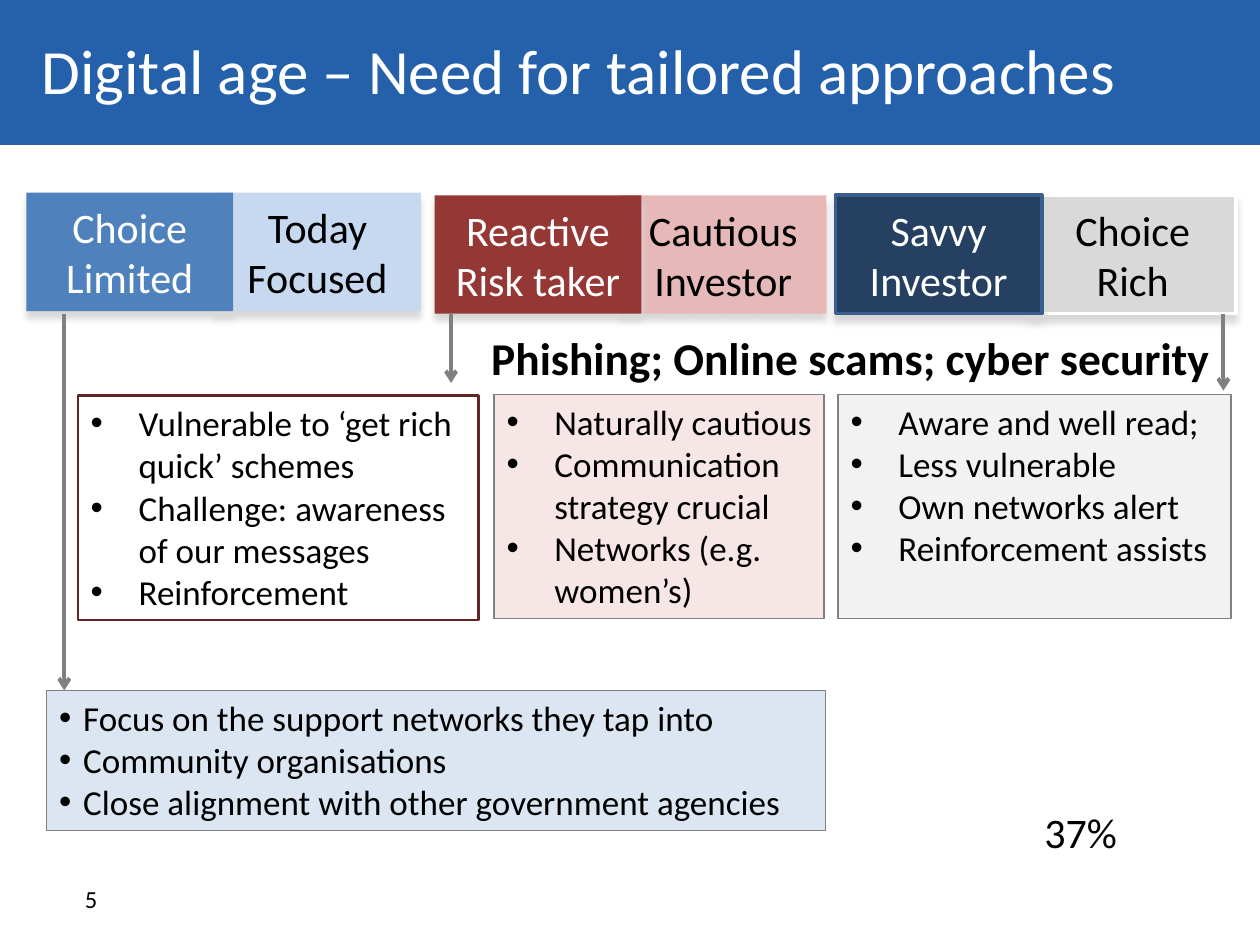
from lxml.etree import SubElement
from pptx import Presentation
from pptx.dml.color import RGBColor
from pptx.enum.shapes import MSO_CONNECTOR, MSO_SHAPE
from pptx.enum.text import MSO_ANCHOR, MSO_AUTO_SIZE, PP_ALIGN
from pptx.oxml.ns import qn
from pptx.util import Inches, Pt

FONT = "Calibri"
BLACK = RGBColor(0x00, 0x00, 0x00)
WHITE = RGBColor(0xFF, 0xFF, 0xFF)
GREY = RGBColor(0x80, 0x80, 0x80)
BANNER_BLUE = RGBColor(0x24, 0x61, 0xAA)
MID_BLUE = RGBColor(0x4F, 0x81, 0xBD)
PALE_BLUE = RGBColor(0xC6, 0xD9, 0xF1)
RED = RGBColor(0x95, 0x37, 0x35)
PINK = RGBColor(0xE6, 0xB9, 0xB8)
NAVY = RGBColor(0x25, 0x40, 0x61)
NAVY_EDGE = RGBColor(0x3A, 0x5F, 0x8C)
SILVER = RGBColor(0xD9, 0xD9, 0xD9)
LIST_GREY = RGBColor(0xF2, 0xF2, 0xF2)
LIST_BLUE = RGBColor(0xDC, 0xE6, 0xF2)
LIST_PINK = RGBColor(0xF6, 0xE7, 0xE6)
DARK_RED = RGBColor(0x63, 0x25, 0x23)

CARD_WIDTH = 1.64
LIST_TOP, LIST_HEIGHT = 3.13, 1.78
ARROW_TOP = 2.49

SEGMENT_PAIRS = [
    ((0.21, 1.53, 3.13, 0.94),
     ("Choice Limited", MID_BLUE, WHITE, None),
     ("Today Focused", PALE_BLUE, BLACK, None)),
    ((3.45, 1.55, 3.11, 0.94),
     ("Reactive Risk taker", RED, WHITE, None),
     ("Cautious Investor", PINK, BLACK, None)),
    ((6.63, 1.55, 3.18, 0.94),
     ("Savvy Investor", NAVY, WHITE, NAVY_EDGE),
     ("Choice Rich", SILVER, BLACK, WHITE)),
]

LISTS = [
    ((0.62, 3.14, 3.18, LIST_HEIGHT), None, DARK_RED, 1.5, 0.38,
     ["Vulnerable to ‘get rich quick’ schemes",
      "Challenge: awareness of our messages",
      "Reinforcement"]),
    ((3.92, LIST_TOP, 2.62, LIST_HEIGHT), LIST_PINK, GREY, 1, 0.38,
     ["Naturally cautious",
      "Communication strategy crucial",
      "Networks (e.g. women’s)"]),
    ((6.65, LIST_TOP, 3.12, LIST_HEIGHT), LIST_GREY, GREY, 1, 0.38,
     ["Aware and well read;",
      "Less vulnerable",
      "Own networks alert",
      "Reinforcement assists"]),
    ((0.37, 5.48, 6.18, 1.11), LIST_BLUE, GREY, 0.75, 0.19,
     ["Focus on the support networks they tap into",
      "Community organisations",
      "Close alignment with other government agencies"]),
]

ARROWS = [(0.51, 5.48), (3.58, 3.04), (9.71, 3.1)]


def place(part, box):
    part.left, part.top, part.width, part.height = map(Inches, box)


def add_run(paragraph, text, size, color, bold=False):
    run = paragraph.add_run()
    run.text = text
    run.font.name = FONT
    run.font.size = Pt(size)
    run.font.bold = bold
    run.font.color.rgb = color


def add_rectangle(slide, box, fill):
    rectangle = slide.shapes.add_shape(MSO_SHAPE.RECTANGLE, *map(Inches, box))
    rectangle.shadow.inherit = False
    rectangle.fill.solid()
    rectangle.fill.fore_color.rgb = fill
    rectangle.line.fill.background()
    return rectangle


def add_banner(slide, box, text):
    left, top, width, height = box
    band = add_rectangle(slide, box, BANNER_BLUE)
    title = slide.shapes.title
    title._element.addprevious(band._element)
    place(title, (left, top, width * 0.98, height * 0.95))
    frame = title.text_frame
    frame.auto_size = MSO_AUTO_SIZE.NONE
    frame.vertical_anchor = MSO_ANCHOR.MIDDLE
    frame.margin_left = Inches(0.33)
    frame.paragraphs[0].alignment = PP_ALIGN.LEFT
    add_run(frame.paragraphs[0], text, 36, WHITE)


def add_card(slide, box, text, fill, ink, edge):
    card = add_rectangle(slide, box, fill)
    if edge is not None:
        card.line.color.rgb = edge
        card.line.width = Pt(2)
    effects = card._element.spPr.find(qn("a:effectLst"))
    shadow = SubElement(effects, qn("a:outerShdw"), blurRad=str(Pt(4)),
                        dist=str(Pt(4)), dir="5400000", rotWithShape="0")
    SubElement(shadow, qn("a:srgbClr"), val=str(SILVER))
    frame = card.text_frame
    frame.word_wrap = True
    frame.vertical_anchor = MSO_ANCHOR.MIDDLE
    frame.paragraphs[0].alignment = PP_ALIGN.CENTER
    add_run(frame.paragraphs[0], text, 24, ink)


def add_segment_pair(slide, box, front, back):
    left, top, width, height = box
    add_card(slide, (left + width - CARD_WIDTH, top, CARD_WIDTH, height), *back)
    add_card(slide, (left, top, CARD_WIDTH, height), *front)


def fill_list(body, box, fill, edge, edge_width, indent, items):
    place(body, box)
    if fill is not None:
        body.fill.solid()
        body.fill.fore_color.rgb = fill
    body.line.color.rgb = edge
    body.line.width = Pt(edge_width)
    frame = body.text_frame
    frame.auto_size = MSO_AUTO_SIZE.NONE
    frame.word_wrap = True
    frame.vertical_anchor = MSO_ANCHOR.TOP
    frame.margin_right = Inches(0.05)
    for number, item in enumerate(items):
        paragraph = frame.add_paragraph() if number else frame.paragraphs[0]
        properties = paragraph._p.get_or_add_pPr()
        properties.set("marL", str(Inches(indent)))
        properties.set("indent", str(-Inches(indent)))
        SubElement(properties, qn("a:buFont"), typeface="Arial")
        SubElement(properties, qn("a:buChar"), char="•")
        paragraph.space_before = Pt(0)
        add_run(paragraph, item, 20, BLACK)


def add_label(slide, box, text, size, bold=False, align=PP_ALIGN.LEFT, wrap=True):
    label = slide.shapes.add_textbox(*map(Inches, box))
    frame = label.text_frame
    frame.word_wrap = wrap
    frame.paragraphs[0].alignment = align
    add_run(frame.paragraphs[0], text, size, BLACK, bold)


def add_down_arrow(slide, x, top, bottom):
    arrow = slide.shapes.add_connector(
        MSO_CONNECTOR.STRAIGHT, *map(Inches, (x, top, x, bottom)))
    arrow.line.color.rgb = GREY
    arrow.line.width = Pt(2.25)
    SubElement(arrow.line._get_or_add_ln(), qn("a:tailEnd"), type="arrow")
    SubElement(arrow._element.spPr, qn("a:effectLst"))


def main():
    deck = Presentation()
    deck.slide_width, deck.slide_height = Inches(10), Inches(7.5)
    comparison_layout = deck.slide_layouts[4]
    slide = deck.slides.add_slide(comparison_layout)

    add_banner(slide, (0, 0, 10, 1.15), "Digital age – Need for tailored approaches")
    bodies = [p for p in slide.placeholders if p.placeholder_format.idx in range(1, 5)]
    for body, segment_list in zip(bodies, LISTS):
        fill_list(body, *segment_list)
    for pair in SEGMENT_PAIRS:
        add_segment_pair(slide, *pair)
    add_label(slide, (3.8, 2.57, 5.95, 0.54),
              "Phishing; Online scams; cyber security", 26, bold=True)
    for x, bottom in ARROWS:
        add_down_arrow(slide, x, ARROW_TOP, bottom)
    add_label(slide, (8.19, 6.35, 0.78, 0.5), "37%", 24, wrap=False)
    add_label(slide, (0.24, 6.97, 0.63, 0.4), "5", 14, align=PP_ALIGN.RIGHT)

    deck.save("out.pptx")


if __name__ == "__main__":
    main()
